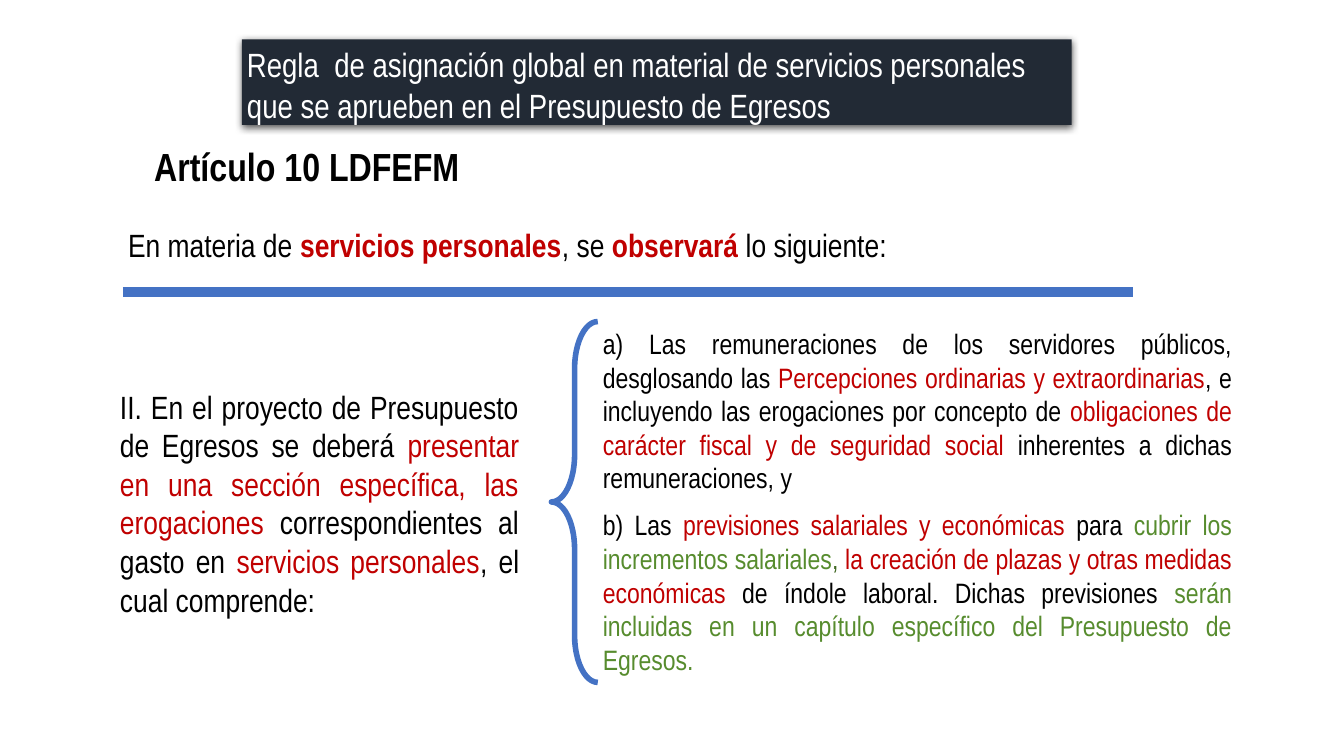
from lxml.etree import SubElement
from pptx import Presentation
from pptx.dml.color import RGBColor
from pptx.enum.shapes import MSO_CONNECTOR as CONNECTOR, MSO_SHAPE as SHAPE
from pptx.enum.text import MSO_ANCHOR as ANCHOR, MSO_AUTO_SIZE as AUTO_SIZE, PP_ALIGN as ALIGN
from pptx.oxml import parse_xml
from pptx.oxml.ns import nsdecls, qn
from pptx.util import Inches, Pt

COLORS = {"black": "000000", "white": "FFFFFF", "red": "C00000", "green": "578C2E",
          "olive": "406823", "blue": "4472C4", "navy": "222A35"}

deck = Presentation()
deck.slide_width, deck.slide_height = Inches(13.33), Inches(7.5)
slide = deck.slides.add_slide(deck.slide_layouts.get_by_name("Title Only"))

# Grid of 100 columns by 100 rows
COL, ROW = deck.slide_width / 100, deck.slide_height / 100


def area(left, top, width, height):
    return int(left * COL), int(top * ROW), int(width * COL), int(height * ROW)


def write(box, runs, size, align=ALIGN.LEFT, bold=()):
    """Fill a box with (text, color) runs; colors named in bold are set bold."""
    frame = box.text_frame
    frame.word_wrap = True
    frame.auto_size = AUTO_SIZE.NONE
    frame.vertical_anchor = ANCHOR.TOP
    frame.margin_left = frame.margin_right = Inches(0.05)
    frame.margin_top = frame.margin_bottom = Inches(0.05)
    paragraph = frame.paragraphs[0]
    paragraph.alignment = align
    for text, color in runs:
        run = paragraph.add_run()
        run.text = text
        run.font.name = "Arial Narrow"
        run.font.size = Pt(size)
        run.font.bold = color in bold
        run.font.color.rgb = RGBColor.from_string(COLORS[color])


# Title banner with a soft shadow
banner = slide.shapes.title
banner.left, banner.top, banner.width, banner.height = area(18, 5.2, 61.74, 11.33)
banner.fill.solid()
banner.fill.fore_color.rgb = RGBColor.from_string(COLORS["navy"])
banner.line.fill.background()
banner._element.spPr.append(parse_xml(
    f'<a:effectLst {nsdecls("a")}><a:outerShdw blurRad="{Pt(5)}" dist="{Pt(1.5)}" '
    f'dir="5400000" algn="ctr" rotWithShape="0"><a:srgbClr val="{COLORS["black"]}">'
    '<a:alpha val="63000"/></a:srgbClr></a:outerShdw></a:effectLst>'))
write(banner, [("Regla  de asignación global en material de servicios personales "
                "que se aprueben en el Presupuesto de Egresos", "white")], 24)

# Article heading and introduction
article = slide.shapes.add_textbox(*area(11.1, 18.13, 31.13, 7.2))
write(article, [("Artículo 10 LDFEFM", "black")], 28, bold=("black",))

intro = slide.shapes.add_textbox(*area(9.15, 29.2, 88.82, 6.27))
write(intro, [("En materia de ", "black"), ("servicios personales", "red"),
              (", se ", "black"), ("observará ", "red"),
              ("lo siguiente:", "black")], 23, bold=("red",))

# Dividing rule
rule_left, rule_y, rule_width, _ = area(9.15, 38.67, 75.17, 0)
rule = slide.shapes.add_connector(CONNECTOR.STRAIGHT, rule_left, rule_y,
                                  rule_left + rule_width, rule_y)
rule.line.color.rgb = RGBColor.from_string(COLORS["blue"])
rule.line.width = Pt(7)
SubElement(rule._element.spPr, qn("a:effectLst"))

# Section II
section = slide.shapes.add_textbox(*area(8.55, 50.53, 30.46, 31.33))
write(section, [
    ("II. En el proyecto de Presupuesto de Egresos se deberá ", "black"),
    ("presentar en una sección específica, las erogaciones ", "red"),
    ("correspondientes al gasto en ", "black"),
    ("servicios personales", "red"),
    (", el cual comprende:", "black")], 23, ALIGN.JUSTIFY)

# Brace that opens the two items
brace = slide.shapes.add_shape(SHAPE.LEFT_BRACE, *area(41.03, 42.53, 3.45, 47.73))
brace.adjustments[0] = 1.02
brace.shadow.inherit = False
brace.fill.background()
brace.line.color.rgb = RGBColor.from_string(COLORS["blue"])
brace.line.width = Pt(4)

# Items a) and b)
items = [
    [("a) Las remuneraciones de los servidores públicos, desglosando las ", "black"),
     ("Percepciones ordinarias y extraordinarias", "red"),
     (", e incluyendo las erogaciones por concepto de ", "black"),
     ("obligaciones de carácter fiscal y de seguridad social ", "red"),
     ("inherentes a dichas remuneraciones, y", "black")],
    [("b) Las ", "black"),
     ("previsiones salariales y económicas ", "red"),
     ("para ", "black"),
     ("cubrir los incrementos salariales", "green"),
     (", ", "olive"),
     ("la creación de plazas y otras medidas económicas ", "red"),
     ("de índole laboral. Dichas previsiones ", "black"),
     ("serán incluidas en un capítulo específico del Presupuesto de Egresos.", "green")],
]
for index, runs in enumerate(items):
    item = slide.shapes.add_textbox(*area(44.48, 42.53 + 24 * index, 47.56, 22.67))
    write(item, runs, 20, ALIGN.JUSTIFY)

deck.save("out.pptx")
